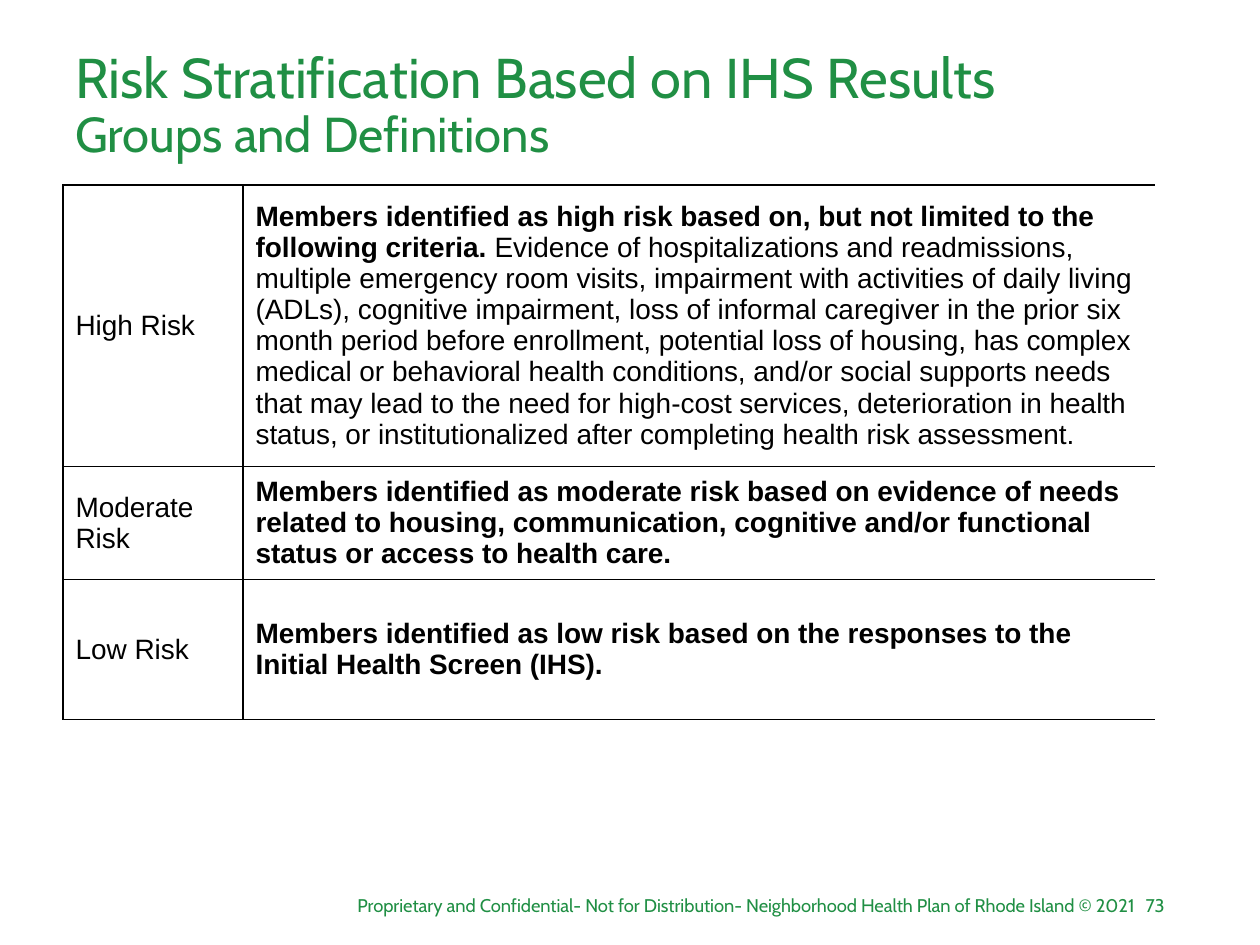
from lxml import etree
from pptx import Presentation
from pptx.dml.color import RGBColor
from pptx.enum.text import MSO_ANCHOR, PP_ALIGN
from pptx.oxml.ns import qn
from pptx.util import Emu, Pt

GREEN = RGBColor(0x20, 0x8F, 0x44)
BLACK = RGBColor(0, 0, 0)
MIDDLE, TOP = MSO_ANCHOR.MIDDLE, MSO_ANCHOR.TOP
LEFT, RIGHT = PP_ALIGN.LEFT, PP_ALIGN.RIGHT

HEAD = [[("Risk Stratification Based on IHS Results", {"size": Pt(32)})],
        [("Groups and Definitions", {"size": Pt(28)})]]
FOOT = ("Proprietary and Confidential- Not for Distribution- "
        "Neighborhood Health Plan of Rhode Island © 2021")
BOLD = {"bold": True}
RISKS = [
    ("High Risk", [
        ("Members identified as high risk based on, but not limited to the "
         "following criteria. ", BOLD),
        ("Evidence of hospitalizations and readmissions, multiple emergency "
         "room visits, impairment with activities of daily living (ADLs), "
         "cognitive impairment, loss of informal caregiver in the prior six "
         "month period before enrollment, potential loss of housing, has "
         "complex medical or behavioral health conditions, and/or social "
         "supports needs that may lead to the need for high-cost services, "
         "deterioration in health status, or institutionalized after "
         "completing health risk assessment.", {})]),
    ("Moderate Risk", [
        ("Members identified as moderate risk based on evidence of needs "
         "related to housing, communication, cognitive and/or functional "
         "status or access to health care.", BOLD)]),
    ("Low Risk", [
        ("Members identified as low risk based on the responses to the "
         "Initial Health Screen (IHS).", BOLD)]),
]


def px(num):
    return Emu(num * 914400 // 126)


class Deck:
    """Holds the style and the current slide."""

    brand = {"name": "Cabin", "size": Pt(10.5), "bold": False}
    body = {"name": "Arial", "size": Pt(16), "bold": False}

    def __init__(self):
        self.prs = Presentation()
        self.prs.slide_width, self.prs.slide_height = px(1260), px(945)
        self.slide = self.prs.slides.add_slide(self.prs.slide_layouts[6])

    def fill_in(self, para, runs, style, color):
        for text, extra in runs:
            run = para.add_run()
            run.text = text
            for key, val in {**style, **extra}.items():
                setattr(run.font, key, val)
            run.font.color.rgb = color

    def text(self, area, lines, align=LEFT, anchor=TOP, space=1.0):
        frame = self.slide.shapes.add_textbox(*map(px, area)).text_frame
        frame.word_wrap = True
        frame.vertical_anchor = anchor
        para = frame.paragraphs[0]
        para.alignment, para.line_spacing = align, space
        for num, runs in enumerate(lines):
            if num:
                para.add_line_break()
            self.fill_in(para, runs, self.brand, GREEN)

    def edge(self, cell, side, show):
        props = cell._tc.get_or_add_tcPr()
        line = etree.SubElement(props, qn(f"a:ln{side}"), w=str(Pt(1)))
        if show:
            fill = etree.SubElement(line, qn("a:solidFill"))
            etree.SubElement(fill, qn("a:srgbClr"), val=str(BLACK))
        else:
            etree.SubElement(line, qn("a:noFill"))

    def table(self, area, cols, rows, data):
        grid = self.slide.shapes.add_table(
            len(rows), len(cols), *map(px, area)).table
        grid.first_row = grid.horz_banding = False
        for col, wide in zip(grid.columns, cols):
            col.width = px(wide)
        for row, high, (name, runs) in zip(grid.rows, rows, data):
            row.height = px(high)
            for num, part in enumerate(([(name, {})], runs)):
                cell = row.cells[num]
                for side in "LRTB":
                    self.edge(cell, side, side != "R" or num == 0)
                cell.fill.background()
                cell.vertical_anchor = MIDDLE
                self.fill_in(cell.text_frame.paragraphs[0], part,
                             self.body, BLACK)


def main():
    deck = Deck()
    deck.text((1119, 888, 58, 35), [[("73", {})]], RIGHT)
    deck.text((315, 888, 833, 35), [[(FOOT, {})]], RIGHT)
    deck.text((63, 28, 1070, 157), HEAD, anchor=MIDDLE, space=0.9)
    deck.table((63, 185, 1092, 534), (180, 912), (281, 113, 140), RISKS)
    deck.prs.save("out.pptx")


if __name__ == "__main__":
    main()
